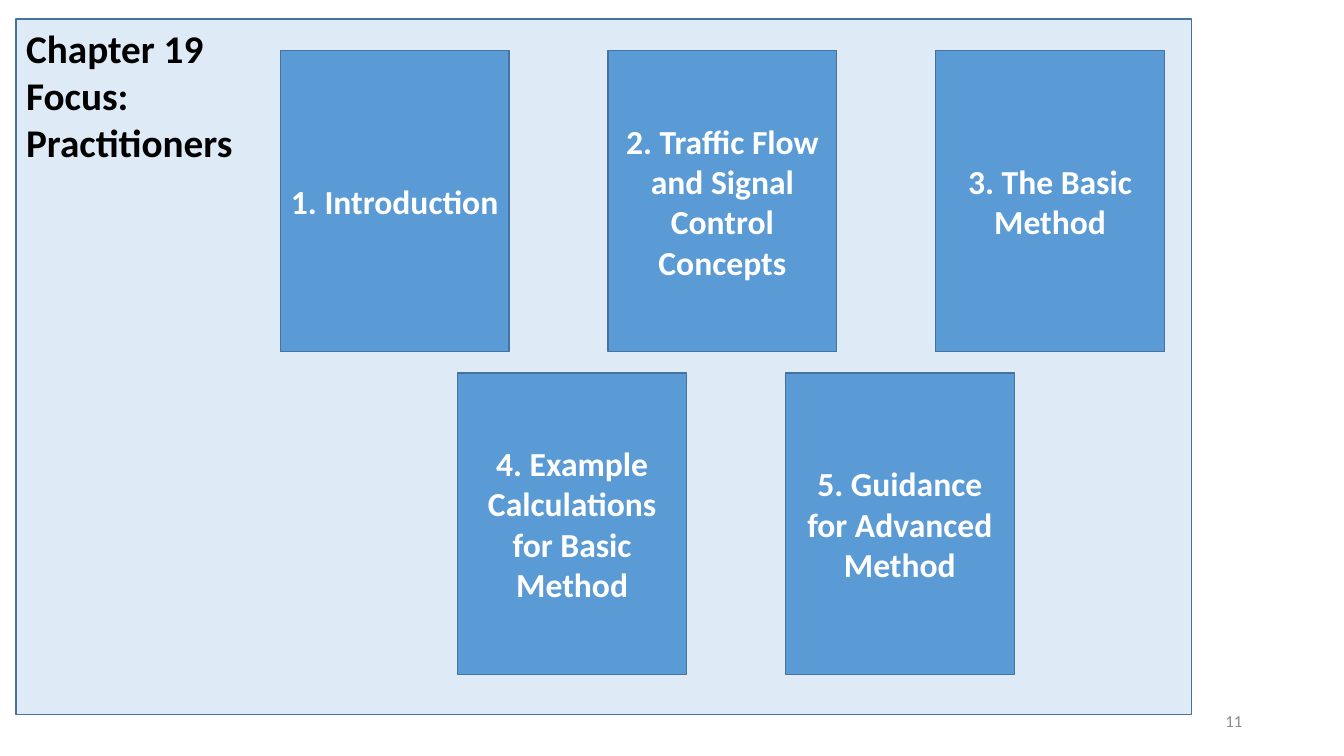
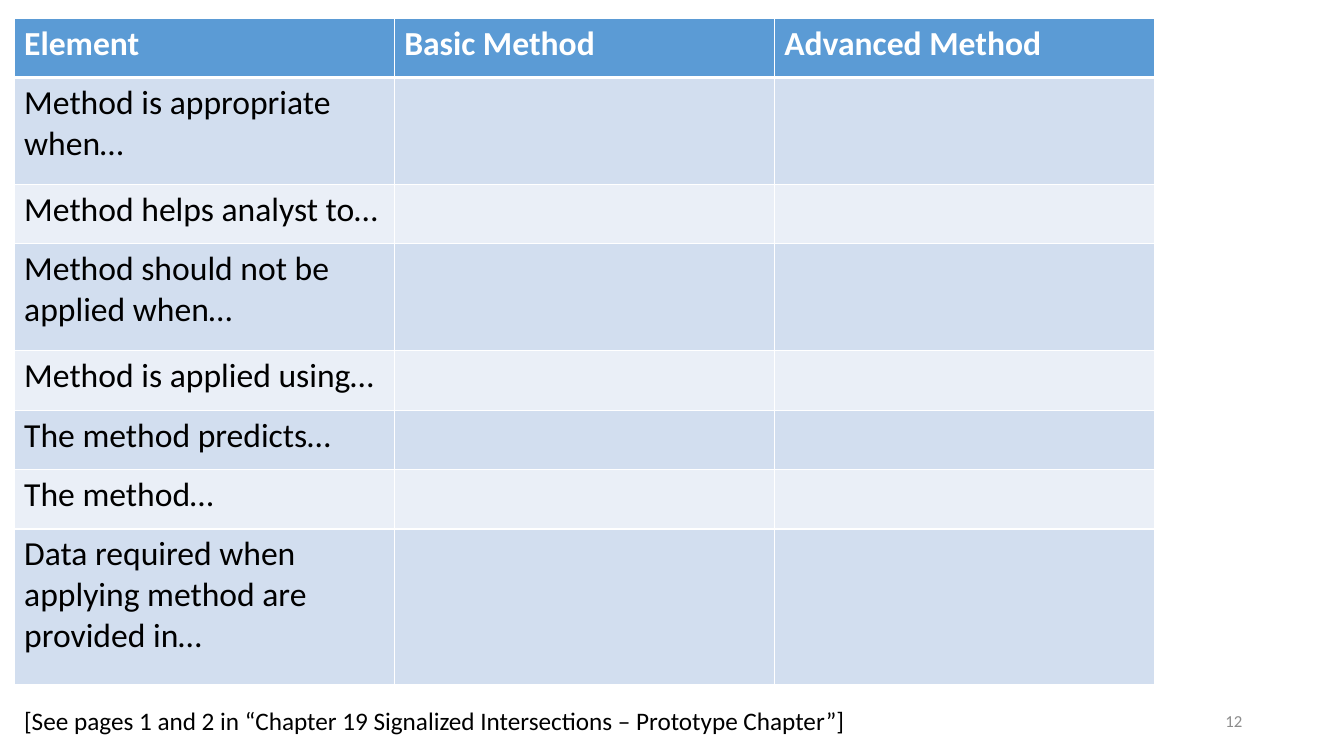
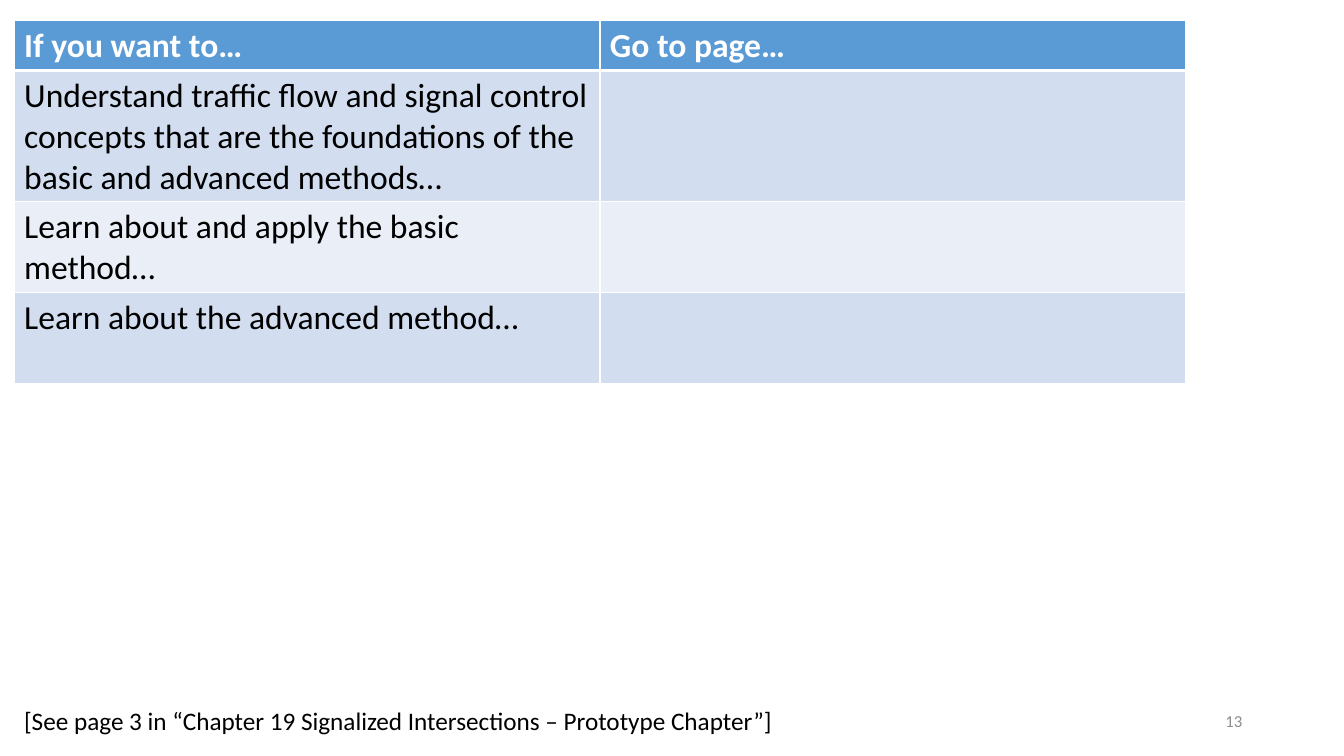
from dataclasses import dataclass

from lxml.etree import SubElement
from pptx import Presentation
from pptx.dml.color import RGBColor
from pptx.enum.shapes import MSO_SHAPE
from pptx.enum.text import MSO_ANCHOR as Anchor, MSO_AUTO_SIZE as AutoSize, PP_ALIGN as Align
from pptx.oxml.ns import qn
from pptx.util import Emu, Pt

EMU_PER_PX = 9144
FONT = "Calibri"
BLACK = RGBColor(0x00, 0x00, 0x00)
WHITE = RGBColor(0xFF, 0xFF, 0xFF)
GRAY = RGBColor(0x8C, 0x8C, 0x8C)
BLUE = RGBColor(0x5B, 0x9B, 0xD5)
OUTLINE = RGBColor(0x43, 0x73, 0x9E)
PANEL = RGBColor(0xDE, 0xEB, 0xF7)
BANDS = (RGBColor(0xD2, 0xDE, 0xEF), RGBColor(0xEA, 0xEF, 0xF7))

TITLE_ONLY, BLANK = 5, 6
CARD_WIDTH, CARD_HEIGHT, CARD_STEP = 227, 299, 325
FOOTER_TOP, FOOTER_HEIGHT = 695, 40
TABLE_LEFT = 14


@dataclass(frozen=True)
class CardRow:
    left: int
    top: int
    labels: tuple[str, ...]


@dataclass(frozen=True)
class Worksheet:
    number: int
    top: int
    column_width: int
    headings: tuple[str, ...]
    heading_height: int
    rows: tuple[tuple[str, int], ...]
    source: str
    source_width: int


CARD_ROWS = (
    CardRow(278, 50, ("1. Introduction", "2. Traffic Flow and Signal Control\nConcepts",
                      "3. The Basic Method")),
    CardRow(454, 370, ("4. Example Calculations for Basic Method",
                       "5. Guidance for Advanced Method")),
)

WORKSHEETS = (
    Worksheet(
        12, 18, 377, ("Element", "Basic Method", "Advanced Method"), 59,
        (
            ("Method is appropriate when…", 106),
            ("Method helps analyst to…", 59),
            ("Method should not be applied when…", 106),
            ("Method is applied using…", 59),
            ("The method predicts…", 59),
            ("The method…", 59),
            ("Data required when applying method are provided in…", 154),
        ),
        "[See pages 1 and 2 in “Chapter 19 Signalized Intersections – Prototype Chapter”]", 844,
    ),
    Worksheet(
        13, 20, 581, ("If you want to…", "Go to page…"), 50,
        (
            ("Understand traffic flow and signal control concepts that are the "
             "foundations of the basic and advanced methods…", 130),
            ("Learn about and apply the basic method…", 90),
            ("Learn about the advanced method…", 90),
        ),
        "[See page 3 in “Chapter 19 Signalized Intersections – Prototype Chapter”]", 777,
    ),
)


def px(length: int) -> Emu:
    return Emu(length * EMU_PER_PX)


def write(frame, text: str, size: int, color: RGBColor, bold: bool = False,
          align: Align = Align.LEFT) -> None:
    frame.text = text
    for para in frame.paragraphs:
        para.alignment = align
        para.font.name = FONT
        para.font.size = Pt(size)
        para.font.bold = bold
        para.font.color.rgb = color


def paint(shape, fill: RGBColor) -> None:
    shape.fill.solid()
    shape.fill.fore_color.rgb = fill
    shape.line.color.rgb = OUTLINE
    shape.line.width = Pt(1)


def add_label(page, left: int, width: int, text: str, size: int, color: RGBColor,
              align: Align = Align.LEFT, wrap: bool = True) -> None:
    box = page.shapes.add_textbox(px(left), px(FOOTER_TOP), px(width), px(FOOTER_HEIGHT))
    frame = box.text_frame
    frame.word_wrap = wrap
    frame.vertical_anchor = Anchor.MIDDLE
    write(frame, text, size, color, align=align)


def add_page(deck, layout: int, number: int):
    page = deck.slides.add_slide(deck.slide_layouts[layout])
    add_label(page, 942, 300, str(number), 12, GRAY, Align.RIGHT)
    return page


def add_card(page, left: int, top: int, label: str) -> None:
    card = page.shapes.add_shape(MSO_SHAPE.RECTANGLE, px(left), px(top),
                                 px(CARD_WIDTH), px(CARD_HEIGHT))
    card.shadow.inherit = False
    paint(card, BLUE)
    card.text_frame.word_wrap = True
    card.text_frame.vertical_anchor = Anchor.MIDDLE
    write(card.text_frame, label, 24, WHITE, True, Align.CENTER)


def add_overview(deck) -> None:
    page = add_page(deck, TITLE_ONLY, 11)
    title = page.shapes.title
    title.left, title.top, title.width, title.height = map(px, (16, 19, 1166, 690))
    paint(title, PANEL)
    title.text_frame.auto_size = AutoSize.NONE
    title.text_frame.vertical_anchor = Anchor.TOP
    write(title.text_frame, "Chapter 19\nFocus:\nPractitioners", 28, BLACK, True)
    for row in CARD_ROWS:
        for index, label in enumerate(row.labels):
            add_card(page, row.left + index * CARD_STEP, row.top, label)


def set_borders(cell, top: int, bottom: int) -> None:
    properties = cell._tc.get_or_add_tcPr()
    for side, points in (("L", 1), ("R", 1), ("T", top), ("B", bottom)):
        edge = SubElement(properties, qn(f"a:ln{side}"), w=str(Pt(points)))
        fill = SubElement(edge, qn("a:solidFill"))
        SubElement(fill, qn("a:srgbClr"), val=str(WHITE))


def add_worksheet(deck, sheet: Worksheet) -> None:
    page = add_page(deck, BLANK, sheet.number)
    columns = len(sheet.headings)
    heights = [sheet.heading_height, *(height for _, height in sheet.rows)]
    table = page.shapes.add_table(
        len(heights), columns, px(TABLE_LEFT), px(sheet.top),
        px(columns * sheet.column_width), px(sum(heights))).table
    for column in table.columns:
        column.width = px(sheet.column_width)
    texts = [sheet.headings, *((text,) + ("",) * (columns - 1) for text, _ in sheet.rows)]
    for index, (height, row_texts) in enumerate(zip(heights, texts)):
        table.rows[index].height = px(height)
        heading = index == 0
        for cell, text in zip(table.rows[index].cells, row_texts):
            set_borders(cell, 3 if index == 1 else 1, 3 if heading else 1)
            cell.fill.solid()
            cell.fill.fore_color.rgb = BLUE if heading else BANDS[(index - 1) % 2]
            if text:
                write(cell.text_frame, text, 24, WHITE if heading else BLACK, heading)
    add_label(page, TABLE_LEFT, sheet.source_width, sheet.source, 18, BLACK, wrap=False)


def main() -> None:
    deck = Presentation()
    deck.slide_width, deck.slide_height = px(1333), px(750)
    add_overview(deck)
    for sheet in WORKSHEETS:
        add_worksheet(deck, sheet)
    deck.save("out.pptx")


if __name__ == "__main__":
    main()
